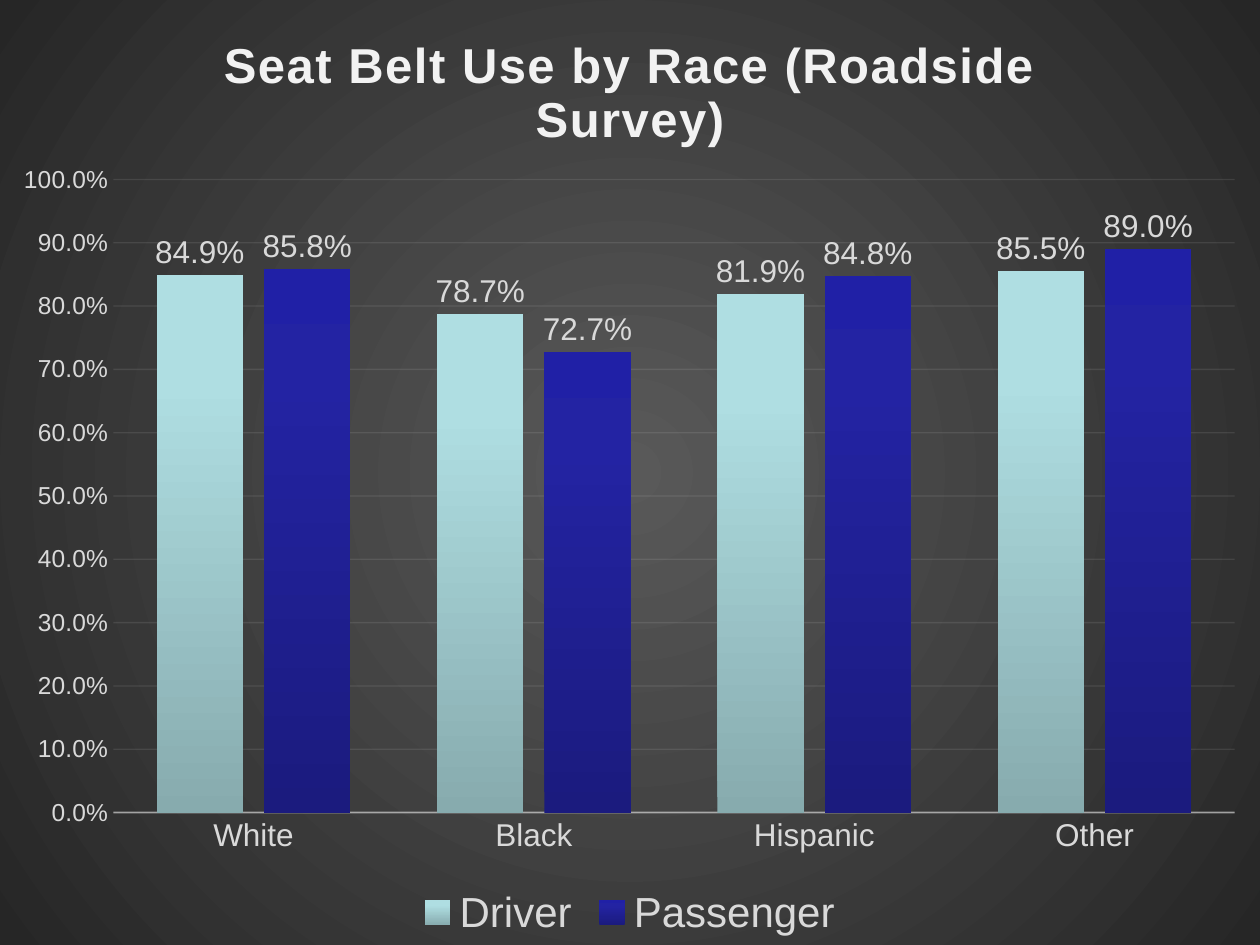
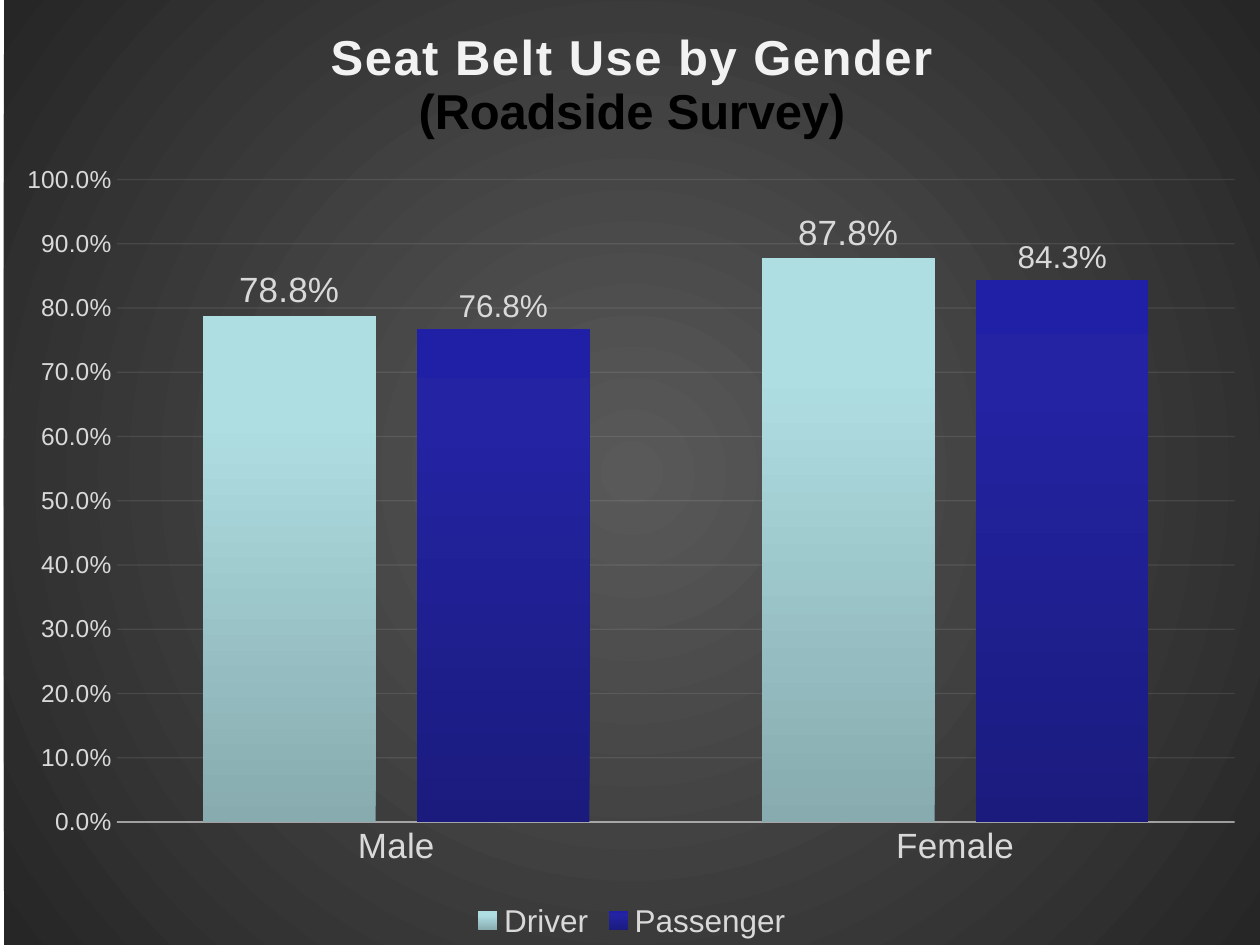
import pptx
import pptx.util
import pptx.dml.color
import pptx.chart.data
import pptx.enum.chart
import pptx.oxml
import pptx.oxml.ns
from pptx.util import Inches

FONT = "Arial"
COLORS = {"title": "F2F2F2", "subtitle": "000000", "label": "D9D9D9", "line": "F2F2F2"}
BACKDROP = [(0, "595959"), (100, "262626")]
BARS = {
    "Driver": [(0, "87ABAE"), (80, "AFDEE2"), (100, "AFE0E4")],
    "Passenger": [(0, "1B1B7E"), (80, "2323A3"), (100, "2020A6")],
}
RADIAL = '<a:path path="circle"><a:fillToRect l="50000" t="50000" r="50000" b="50000"/></a:path>'
UPWARD = '<a:lin ang="16200000" scaled="0"/>'
PERCENT = "0.0%"


def parse_xml(text):
    return pptx.oxml.parse_xml(text)


def qn(tag):
    return pptx.oxml.ns.qn(tag)


def nsdecls(*prefixes):
    return pptx.oxml.ns.nsdecls(*prefixes)


def set_attrs(obj, **values):
    for name, value in values.items():
        setattr(obj, name, value)


def style_font(font, size, color="label", bold=False):
    set_attrs(font, name=FONT, size=pptx.util.Pt(size), bold=bold)
    font.color.rgb = pptx.dml.color.RGBColor.from_string(COLORS[color])


def gradient(stops, direction):
    gs = "".join(
        f'<a:gs pos="{pos * 1000}"><a:srgbClr val="{color}"/></a:gs>' for pos, color in stops
    )
    return parse_xml(
        f'<a:gradFill {nsdecls("a")} rotWithShape="1"><a:gsLst>{gs}</a:gsLst>{direction}</a:gradFill>'
    )


def style_line(line, width, opacity):
    line.width = pptx.util.Pt(width)
    line.fill.solid()
    line.color.rgb = pptx.dml.color.RGBColor.from_string(COLORS["line"])
    color = line.fill._xPr.find(".//" + qn("a:srgbClr"))
    color.append(parse_xml(f'<a:alpha {nsdecls("a")} val="{opacity * 1000}"/>'))


def add_backdrop(chart):
    sp_pr = parse_xml(f'<c:spPr {nsdecls("c", "a")}><a:ln><a:noFill/></a:ln></c:spPr>')
    sp_pr.insert(0, gradient(BACKDROP, RADIAL))
    chart.element.find(qn("c:chart")).addnext(sp_pr)


def place_plot(chart, x, y, w, h):
    area = chart.element.find(".//" + qn("c:plotArea"))
    for old in area.findall(qn("c:layout")):
        area.remove(old)
    area.insert(0, parse_xml(
        f'<c:layout {nsdecls("c")}><c:manualLayout><c:layoutTarget val="inner"/>'
        '<c:xMode val="edge"/><c:yMode val="edge"/>'
        f'<c:x val="{x}"/><c:y val="{y}"/><c:w val="{w}"/><c:h val="{h}"/>'
        '</c:manualLayout></c:layout>'
    ))


def add_title(chart, lines):
    tf = chart.chart_title.text_frame
    chart.chart_title.include_in_layout = False
    for i, (text, color, spacing) in enumerate(lines):
        p = tf.paragraphs[0] if i == 0 else tf.add_paragraph()
        r = p.add_run()
        r.text = text
        style_font(r.font, 28, color, bold=True)
        r.font._element.set("spc", str(spacing))


def style_axes(chart, category_size):
    ticks = pptx.enum.chart.XL_TICK_MARK.NONE
    cat, val = chart.category_axis, chart.value_axis
    for axis, size in ((cat, category_size), (val, 14)):
        set_attrs(axis, major_tick_mark=ticks, minor_tick_mark=ticks)
        style_font(axis.tick_labels.font, size)
    style_line(cat.format.line, 1, 54)
    set_attrs(val, minimum_scale=0, maximum_scale=1, major_unit=0.1, has_major_gridlines=True)
    set_attrs(val.tick_labels, number_format=PERCENT, number_format_is_linked=False)
    val.format.line.fill.background()
    style_line(val.major_gridlines.format.line, 0.75, 10)


def style_series(series, label_size):
    series.format.line.fill.background()
    series._element.find(qn("c:spPr")).insert(0, gradient(BARS[series.name], UPWARD))
    labels = series.data_labels
    set_attrs(
        labels, show_value=True, number_format=PERCENT, number_format_is_linked=False,
        position=pptx.enum.chart.XL_LABEL_POSITION.OUTSIDE_END,
    )
    style_font(labels.font, label_size)


def add_survey_slide(prs, box, title, categories, values, plot, sizes):
    s = prs.slides.add_slide(prs.slide_layouts[6])
    data = pptx.chart.data.CategoryChartData(number_format=PERCENT)
    data.categories = categories
    for name in BARS:
        data.add_series(name, values[name])
    kind = pptx.enum.chart.XL_CHART_TYPE.COLUMN_CLUSTERED
    chart = s.shapes.add_chart(kind, *map(Inches, box), data).chart
    style_font(chart.font, 10)
    add_backdrop(chart)
    add_title(chart, title)
    place_plot(chart, *plot)
    style_axes(chart, sizes["category"])
    set_attrs(chart.plots[0], gap_width=100, overlap=-24, vary_by_categories=False)
    for series in chart.plots[0].series:
        style_series(series, sizes[series.name])
    chart.has_legend = True
    set_attrs(
        chart.legend, include_in_layout=False,
        position=pptx.enum.chart.XL_LEGEND_POSITION.BOTTOM,
    )
    style_font(chart.legend.font, sizes["legend"])


def main():
    prs = pptx.Presentation()
    set_attrs(prs, slide_width=Inches(10), slide_height=Inches(7.5))
    add_survey_slide(
        prs, (0, 0, 10, 7.5),
        [("Seat Belt Use by Race (Roadside Survey)", "title", 100)],
        ["White", "Black", "Hispanic", "Other"],
        {"Driver": [0.849, 0.787, 0.819, 0.855], "Passenger": [0.858, 0.727, 0.848, 0.89]},
        (0.09, 0.19, 0.89, 0.67),
        {"category": 18, "Driver": 18, "Passenger": 18, "legend": 24},
    )
    add_survey_slide(
        prs, (0.03, 0, 9.97, 7.5),
        [("Seat Belt Use by Gender", "title", 100), ("(Roadside Survey)", "subtitle", 0)],
        ["Male", "Female"],
        {"Driver": [0.788, 0.878], "Passenger": [0.768, 0.843]},
        (0.09, 0.19, 0.89, 0.68),
        {"category": 20, "Driver": 20, "Passenger": 18, "legend": 18},
    )
    prs.save("out.pptx")


if __name__ == "__main__":
    main()
